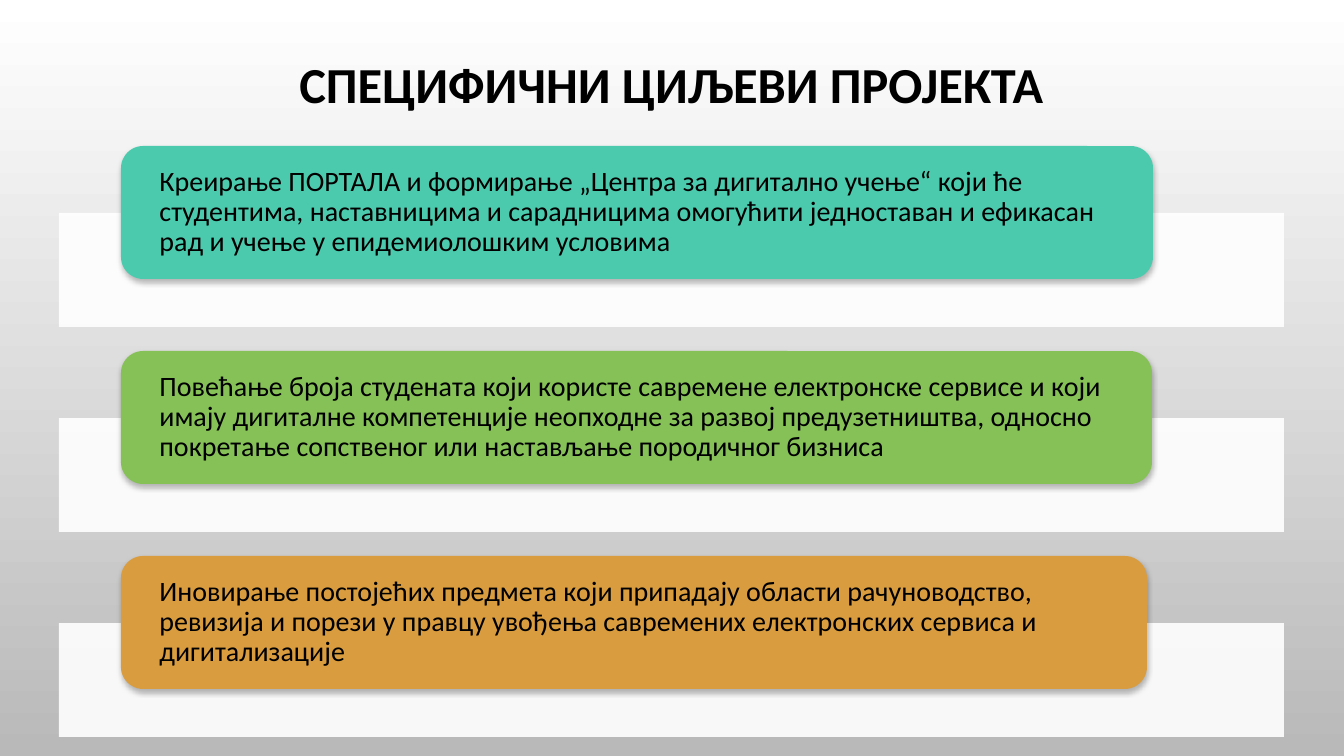
from lxml import etree
from pptx import Presentation
from pptx.dml.color import RGBColor
from pptx.enum.shapes import MSO_SHAPE
from pptx.enum.text import MSO_ANCHOR, PP_ALIGN
from pptx.oxml.ns import qn
from pptx.util import Pt

RECTANGLE, ROUNDED = MSO_SHAPE.RECTANGLE, MSO_SHAPE.ROUNDED_RECTANGLE
MIDDLE = MSO_ANCHOR.MIDDLE
LEFT, CENTER = PP_ALIGN.LEFT, PP_ALIGN.CENTER

TITLE = "СПЕЦИФИЧНИ ЦИЉЕВИ ПРОЈЕКТА"
# text, card colour, card width in px
GOALS = [
    ("Креирање ПОРТАЛА и формирање „Центра за дигитално учење“ који ће студентима, "
     "наставницима и сарадницима омогућити једноставан и ефикасан рад и учење у "
     "епидемиолошким условима", "teal", 1032),
    ("Повећање броја студената који користе савремене електронске сервисе и који имају "
     "дигиталне компетенције неопходне за развој предузетништва, односно покретање "
     "сопственог или настављање породичног бизниса", "green", 1031),
    ("Иновирање постојећих предмета који припадају области рачуноводство, ревизија и "
     "порези у правцу увођења савремених електронских сервиса и дигитализације",
     "amber", 1026),
]
COLOURS = {"white": "FFFFFF", "grey": "B9B9B9", "black": "000000",
           "teal": "4BCAAD", "green": "86C157", "amber": "D99C3F"}

EMU_PER_PX = 914400 / 100.8
PAGE_SIZE = (1344, 756)
TITLE_BOX = (180, 17, 983, 141)
BAND_LEFT, BAND_TOP, BAND_WIDTH, BAND_HEIGHT = 59, 213, 1225, 114
CARD_LEFT, CARD_TOP, CARD_HEIGHT = 121, 146, 133
GOAL_STEP = 205
CARD_MARGIN = 32


def emu(px):
    return round(px * EMU_PER_PX)


def colour(name):
    return RGBColor.from_string(COLOURS[name])


def write(shape, text, size, bold, alignment, margin):
    frame = shape.text_frame
    settings = {"word_wrap": True, "vertical_anchor": MIDDLE,
                "margin_left": emu(margin), "margin_right": emu(margin),
                "margin_top": 0, "margin_bottom": 0}
    for name, value in settings.items():
        setattr(frame, name, value)
    para = frame.paragraphs[0]
    para.alignment, para.line_spacing = alignment, 0.9
    span = para.add_run()
    span.text = text
    for name, value in {"name": "Calibri", "size": Pt(size), "bold": bold}.items():
        setattr(span.font, name, value)
    span.font.color.rgb = colour("black")


def add_panel(page, preset, box, fill):
    panel = page.shapes.add_shape(preset, *map(emu, box))
    panel.shadow.inherit = False
    panel.fill.solid()
    panel.fill.fore_color.rgb = colour(fill)
    panel.line.fill.background()
    return panel


def add_alpha(element, percent):
    etree.SubElement(element, qn("a:alpha"), val=str(percent * 1000))


def add_soft_shadow(shape):
    effects = shape._element.spPr.find(qn("a:effectLst"))
    shadow = etree.SubElement(effects, qn("a:outerShdw"), blurRad=str(Pt(4)),
                              dist=str(Pt(2)), dir="5400000", rotWithShape="0")
    tint = etree.SubElement(shadow, qn("a:srgbClr"), val=COLOURS["black"])
    add_alpha(tint, 28)


def paint_background(page):
    fill = page.background.fill
    fill.gradient()
    fill.gradient_angle = 270
    for stop, name in zip(fill.gradient_stops, ("white", "grey")):
        stop.color.rgb = colour(name)


def main():
    deck = Presentation()
    deck.slide_width, deck.slide_height = map(emu, PAGE_SIZE)
    page = deck.slides.add_slide(deck.slide_layouts[6])
    paint_background(page)

    title = page.shapes.add_textbox(*map(emu, TITLE_BOX))
    write(title, TITLE, 36, True, CENTER, 10)

    for index, (text, fill, width) in enumerate(GOALS):
        offset = index * GOAL_STEP
        band = add_panel(page, RECTANGLE,
                         (BAND_LEFT, BAND_TOP + offset, BAND_WIDTH, BAND_HEIGHT), "white")
        add_alpha(band._element.spPr.find(qn("a:solidFill"))[0], 90)
        card = add_panel(page, ROUNDED,
                         (CARD_LEFT, CARD_TOP + offset, width, CARD_HEIGHT), fill)
        add_soft_shadow(card)
        write(card, text, 20, False, LEFT, CARD_MARGIN)

    deck.save("out.pptx")


if __name__ == "__main__":
    main()
